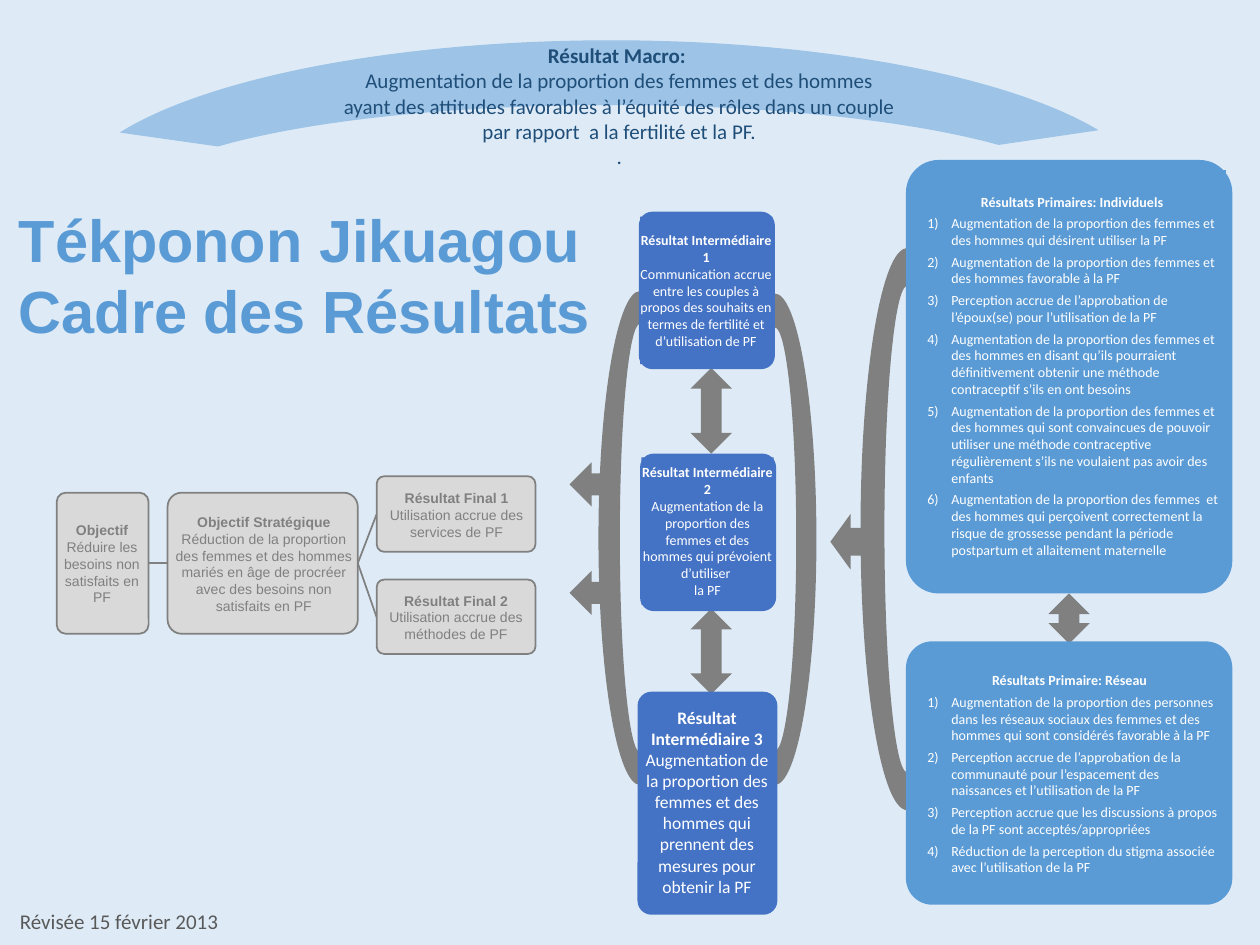
from lxml import etree
from pptx import Presentation
from pptx.dml.color import RGBColor
from pptx.enum.shapes import MSO_CONNECTOR, MSO_SHAPE
from pptx.enum.text import MSO_ANCHOR, MSO_AUTO_SIZE, PP_ALIGN
from pptx.oxml.ns import qn
from pptx.util import Inches, Pt

ROUNDED, RECTANGLE = MSO_SHAPE.ROUNDED_RECTANGLE, MSO_SHAPE.RECTANGLE
LEFT_ARROW, UP_DOWN_ARROW = MSO_SHAPE.LEFT_ARROW, MSO_SHAPE.UP_DOWN_ARROW
BLOCK_ARC, STRAIGHT = MSO_SHAPE.BLOCK_ARC, MSO_CONNECTOR.STRAIGHT
TOP, MIDDLE = MSO_ANCHOR.TOP, MSO_ANCHOR.MIDDLE
LEFT, CENTER = PP_ALIGN.LEFT, PP_ALIGN.CENTER
NO_AUTOSIZE = MSO_AUTO_SIZE.NONE

GRAY, LIGHT_GRAY, WHITE = "808080", "D9D9D9", "FFFFFF"
BLUE, DARK_BLUE = "5B9BD5", "4472C4"
KAPPA = 0.55  # Bézier handle length of a quarter ellipse


def paint(shape, fill, line=None):
    shape.shadow.inherit = False
    shape.fill.solid()
    shape.fill.fore_color.rgb = RGBColor.from_string(fill)
    if line:
        shape.line.color.rgb = RGBColor.from_string(line)
        shape.line.width = Pt(1)
    else:
        shape.line.fill.background()


def write(para, text, size, font, color, bold=False):
    for index, part in enumerate(text.split("\n")):
        if index:
            para.add_line_break()
        if part:
            span = para.add_run()
            span.text = part
            span.font.size = Pt(size)
            span.font.name = font
            span.font.bold = bold
            span.font.color.rgb = RGBColor.from_string(color)


deck = Presentation()
deck.slide_width, deck.slide_height = Inches(10), Inches(7.5)
page = deck.slides.add_slide(deck.slide_layouts[3])
page.background.fill.solid()
page.background.fill.fore_color.rgb = RGBColor.from_string("DEEBF7")
shapes = page.shapes

# Title
title = shapes.title
title.left, title.top, title.width, title.height = map(Inches, (0.05, 1.56, 4.92, 1.25))
title.text_frame.vertical_anchor = TOP
title.text_frame.auto_size = NO_AUTOSIZE
for index, text in enumerate(["Tékponon Jikuagou", "Cadre des Résultats"]):
    para = title.text_frame.add_paragraph() if index else title.text_frame.paragraphs[0]
    para.alignment = LEFT
    write(para, text, 34, "Arial", BLUE, True)

# Revision date
date = shapes.add_textbox(Inches(0.06), Inches(7.16), Inches(1.8), Inches(0.3))
date.text_frame.word_wrap = False
write(date.text_frame.paragraphs[0], "Révisée 15 février 2013", 12, "Calibri", "595959")

# Curved brackets: half ellipses (x, middle y, outer radii, inner radii, side)
brackets = [
    (7.2, 4.2, (0.37, 2.23), (0.18, 1.93), -1),
    (5.08, 4.27, (0.33, 1.96), (0.16, 1.7), -1),
    (6.15, 4.28, (0.33, 1.95), (0.17, 1.68), 1),
]
handles = [(0, 1), (KAPPA, 1), (1, KAPPA), (1, 0), (1, -KAPPA), (KAPPA, -1), (0, -1)]
for x, y, outer, inner, side in brackets:
    points = [
        (Inches(x + side * rx * across), Inches(y + ry * down))
        for (rx, ry), sweep in ((outer, handles), (inner, handles[::-1]))
        for across, down in sweep
    ]
    builder = shapes.build_freeform(*points[0])
    builder.add_line_segments(points[1:], close=True)
    bracket = builder.convert_to_shape()
    paint(bracket, GRAY)
    # Turn each three points of a quarter ellipse into one curve
    segments = list(bracket._element.iter(qn("a:lnTo")))
    for start in (0, 3, 7, 10):
        curve = etree.Element(qn("a:cubicBezTo"))
        segments[start].addprevious(curve)
        for segment in segments[start:start + 3]:
            curve.append(segment[0])
            segment.getparent().remove(segment)

# Block arrows
for kind, place in [
    (LEFT_ARROW, (6.59, 4.08, 0.32, 0.44)),
    (LEFT_ARROW, (4.52, 3.67, 0.38, 0.35)),
    (LEFT_ARROW, (4.52, 4.53, 0.37, 0.35)),
    (UP_DOWN_ARROW, (8.32, 4.71, 0.33, 0.4)),
    (UP_DOWN_ARROW, (5.48, 2.92, 0.33, 0.68)),
    (UP_DOWN_ARROW, (5.48, 4.83, 0.33, 0.68)),
]:
    paint(shapes.add_shape(kind, *map(Inches, place)), GRAY)

# Connecting lines between the goals
for x1, y1, x2, y2 in [(1.18, 4.47, 1.33, 4.47), (2.84, 4.47, 2.99, 4.08), (2.84, 4.47, 2.99, 4.9)]:
    link = shapes.add_connector(STRAIGHT, *map(Inches, (x1, y1, x2, y2)))
    link.line.color.rgb = RGBColor.from_string(GRAY)
    link.line.width = Pt(1)
    etree.SubElement(link._element.spPr, qn("a:effectLst"))

# Goal and intermediate result cards: frame, text area, heading, body, size
goals = [
    ((0.45, 3.91, 0.73, 1.12), (0.47, 3.94, 0.68, 1.07), "Objectif",
     "Réduire les besoins non satisfaits en PF", 8),
    ((1.33, 3.91, 1.51, 1.12), (1.37, 3.95, 1.45, 1.05), "Objectif Stratégique",
     "Réduction de la proportion des femmes et des hommes mariés en âge de procréer "
     "avec des besoins non satisfaits en PF", 8),
    ((2.99, 3.78, 1.26, 0.6), (3.01, 3.8, 1.23, 0.57), "Résultat Final 1",
     "Utilisation accrue des services de PF", 8),
    ((2.99, 4.6, 1.26, 0.59), (3.01, 4.62, 1.22, 0.56), "Résultat Final 2",
     "Utilisation accrue des méthodes de PF", 8),
]
intermediates = [
    ((5.07, 1.68, 1.08, 1.25), (5.08, 1.72, 1.05, 1.17), "Résultat Intermédiaire 1",
     "Communication accrue entre les couples à propos des souhaits en termes de "
     "fertilité et d’utilisation de PF", 8),
    ((5.08, 3.6, 1.08, 1.25), (5.09, 3.63, 1.05, 1.17), "Résultat Intermédiaire 2",
     "Augmentation de la proportion des femmes et des hommes qui prévoient "
     "d’utiliser \nla PF", 8),
    ((5.06, 5.49, 1.11, 1.77), (5.1, 5.65, 1.02, 1.43), "Résultat Intermédiaire 3",
     "Augmentation de la proportion des femmes et des hommes qui prennent des "
     "mesures pour obtenir la PF", 10),
]
for cards, fill, line, font, color in [
    (goals, LIGHT_GRAY, GRAY, "Arial", GRAY),
    (intermediates, DARK_BLUE, None, "Calibri", WHITE),
]:
    for frame_place, text_place, heading, body, size in cards:
        frame = shapes.add_shape(ROUNDED, *map(Inches, frame_place))
        frame.adjustments[0] = 0.1
        paint(frame, fill, line)
        if line:
            box = shapes.add_textbox(*map(Inches, text_place))
        else:
            box = shapes.add_shape(RECTANGLE, *map(Inches, text_place))
            paint(box, fill)
        text_frame = box.text_frame
        text_frame.word_wrap = True
        text_frame.vertical_anchor = MIDDLE
        text_frame.margin_left = text_frame.margin_right = Inches(0)
        text_frame.margin_top = text_frame.margin_bottom = Inches(0.01)
        para = text_frame.paragraphs[0]
        para.alignment = CENTER
        para.space_after = Pt(0.35 * size)
        write(para, heading + "\n", size, font, color, True)
        write(para, body, size, font, color)

# Primary result panels with numbered lists
panels = [
    ((7.19, 1.27, 2.59, 3.44), (7.29, 1.35, 2.44, 3.26), "Résultats Primaires: Individuels", [
        "Augmentation de la proportion des femmes et des hommes qui désirent utiliser la PF",
        "Augmentation de la proportion des femmes et des hommes favorable à la PF",
        "Perception accrue de l’approbation de l’époux(se) pour l’utilisation de la PF",
        "Augmentation de la proportion des femmes et des hommes en disant qu’ils pourraient "
        "définitivement obtenir une méthode contraceptif s’ils en ont besoins",
        "Augmentation de la proportion des femmes et des hommes qui sont convaincues de pouvoir "
        "utiliser une méthode contraceptive régulièrement s’ils ne voulaient pas avoir des enfants",
        "Augmentation de la proportion des femmes  et des hommes qui perçoivent correctement la "
        "risque de grossesse pendant la période postpartum et allaitement maternelle",
    ]),
    ((7.19, 5.09, 2.59, 2.09), (7.29, 5.16, 2.4, 1.96), "Résultats Primaire: Réseau", [
        "Augmentation de la proportion des personnes dans les réseaux sociaux des femmes et des "
        "hommes qui sont considérés favorable à la PF",
        "Perception accrue de l’approbation de la communauté pour l’espacement des naissances et "
        "l’utilisation de la PF",
        "Perception accrue que les discussions à propos de la PF sont acceptés/appropriées",
        "Réduction de la perception du stigma associée avec l’utilisation de la PF",
    ]),
]
for body, (frame_place, text_place, heading, items) in zip(list(page.placeholders)[1:], panels):
    frame = shapes.add_shape(ROUNDED, *map(Inches, frame_place))
    frame.adjustments[0] = 0.1
    paint(frame, BLUE)
    frame._element.addnext(body._element)  # list in front of its panel
    body.left, body.top, body.width, body.height = map(Inches, text_place)
    body.fill.solid()
    body.fill.fore_color.rgb = RGBColor.from_string(BLUE)
    text_frame = body.text_frame
    text_frame.auto_size = NO_AUTOSIZE
    text_frame.vertical_anchor = MIDDLE
    text_frame.margin_left = text_frame.margin_right = Inches(0.01)
    text_frame.margin_top = text_frame.margin_bottom = Inches(0.01)
    for index, text in enumerate([heading] + items):
        para = text_frame.add_paragraph() if index else text_frame.paragraphs[0]
        para.alignment = LEFT if index else CENTER
        para.space_before, para.space_after = Pt(0), Pt(2.8)
        settings = para._p.get_or_add_pPr()
        settings.set("marL", str(Inches(0.25 if index else 0)))
        settings.set("indent", str(Inches(-0.19 if index else 0)))
        if index:
            etree.SubElement(settings, qn("a:buAutoNum"), type="arabicParenR")
        else:
            etree.SubElement(settings, qn("a:buNone"))
        write(para, text, 8, "Calibri", WHITE, index == 0)

# Macro result arc and text
arc = shapes.add_shape(BLOCK_ARC, Inches(0.53), Inches(0.32), Inches(8.64), Inches(2.57))
for index, value in enumerate([112.84, 210.96, 0.2]):
    arc.adjustments[index] = value
paint(arc, "9DC3E6")
macro = shapes.add_textbox(Inches(2.62), Inches(0.29), Inches(4.59), Inches(1.11))
macro.text_frame.word_wrap = True
for index, text in enumerate([
    "Résultat Macro: ",
    "Augmentation de la proportion des femmes et des hommes ayant des attitudes favorables "
    "à l’équité des rôles dans un couple par rapport  a la fertilité et la PF.",
    ".",
]):
    para = macro.text_frame.add_paragraph() if index else macro.text_frame.paragraphs[0]
    para.alignment = CENTER
    write(para, text, 12, "Calibri", "1F4E79", index == 0)

deck.save("out.pptx")
